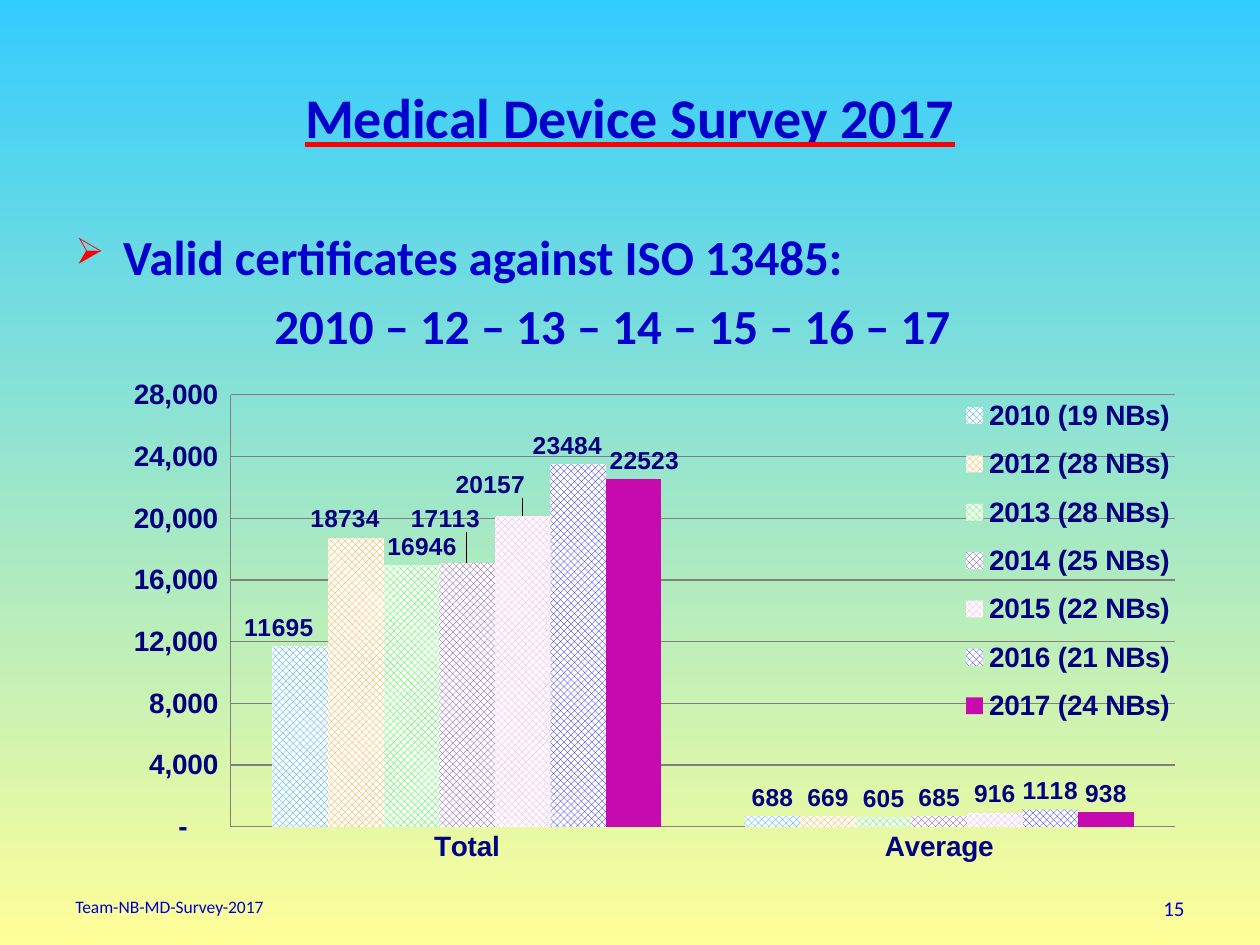
from dataclasses import dataclass

from lxml import etree
from pptx import Presentation
from pptx import util as u
from pptx.chart.data import CategoryChartData
from pptx.dml.color import RGBColor
from pptx.enum import chart as ch, dml, text
from pptx.oxml import parse_xml
from pptx.oxml.ns import nsdecls, qn


@dataclass(frozen=True)
class Theme:
    sky: str = "33CCFF"
    sand: str = "FFFF99"
    blue: str = "0000CC"
    navy: str = "000080"
    red: str = "FF0000"
    grey: str = "808080"
    white: str = "FFFFFF"
    font: str = "Calibri"
    plot: str = "Arial"
    title: int = 32
    body: int = 28
    axis: int = 16
    label: int = 14
    page: int = 12
    foot: int = 10


T = Theme()
CELL = 0.1  # grid of 100 columns by 75 rows, in inches

# name, total, average, colour, shift of the total's label (shares of the chart)
ROWS = [
    ("2010 (19 NBs)", 11695, 688, "0099FF", (-0.02, 0)),
    ("2012 (28 NBs)", 18734, 669, "FF9900", (-0.01, 0)),
    ("2013 (28 NBs)", 16946, 605, "00FF00", (0.01, 0)),
    ("2014 (25 NBs)", 17113, 685, "7030A0", (-0.02, -0.04)),
    ("2015 (22 NBs)", 20157, 916, "FD91E8", (-0.03, -0.02)),
    ("2016 (21 NBs)", 23484, 1118, "0101FF", (-0.01, 0)),
    ("2017 (24 NBs)", 22523, 938, "C709B0", (0.01, 0)),
]


def rgb(hue):
    return RGBColor.from_string(hue)


def grid(*cells):
    return [u.Inches(n * CELL) for n in cells]


def style(font, size, hue, name=T.font, bold=False):
    font.size, font.name, font.bold = u.Pt(size), name, bold
    font.color.rgb = rgb(hue)


def write(para, words, size=T.body, hue=T.blue, bold=False, align=None):
    run = para.add_run()
    run.text = words
    style(run.font, size, hue, bold=bold)
    para.alignment = align
    return run


def box(slide, *cells):
    frame = slide.shapes.add_textbox(*grid(*cells)).text_frame
    frame.word_wrap = True
    return frame


def bullet(para, mark, hue, share):
    props = para._p.get_or_add_pPr()
    props.set("marL", str(u.Inches(0.38)))
    props.set("indent", str(u.Inches(-0.38)))
    tone = etree.SubElement(props, qn("a:buClr"))
    etree.SubElement(tone, qn("a:srgbClr"), val=hue)
    etree.SubElement(props, qn("a:buSzPct"), val=str(share * 1000))
    etree.SubElement(props, qn("a:buChar"), char=mark)


def paint(slide):
    fill = slide.background.fill
    fill.gradient()
    fill.gradient_angle = 270
    for stop, hue, spot in zip(fill.gradient_stops, (T.sky, T.sand), (0, 1)):
        stop.color.rgb = rgb(hue)
        stop.position = spot


def head(slide, words):
    shape = slide.shapes.title
    shape.left, shape.top, shape.width, shape.height = grid(5, 3, 90, 12.5)
    frame = shape.text_frame
    frame.vertical_anchor = text.MSO_ANCHOR.MIDDLE
    run = write(frame.paragraphs[0], words, size=T.title, bold=True,
                align=text.PP_ALIGN.CENTER)
    run.font.underline = True
    line = parse_xml(f'<a:uFill {nsdecls("a")}><a:solidFill>'
                     f'<a:srgbClr val="{T.red}"/></a:solidFill></a:uFill>')
    run.font._element.find(qn("a:latin")).addprevious(line)


def body(slide):
    frame = box(slide, 5, 17.5, 90, 11.6)
    first = frame.paragraphs[0]
    bullet(first, "➢", T.red, 75)
    write(first, "Valid certificates against ISO 13485:", bold=True)
    years = frame.add_paragraph()
    years.space_before = u.Pt(T.body * 0.2)
    years._p.get_or_add_pPr().set("marL", str(u.Inches(1.58)))
    write(years, "2010 – 12 – 13 – 14 – 15 – 16 – 17", bold=True)


def layout(x, y, w=None, h=None, inner=False):
    """Manual chart layout: a shift, or a fixed frame when w and h are given."""
    parts = '<c:layoutTarget val="inner"/>' if inner else ""
    if w:
        parts += '<c:xMode val="edge"/><c:yMode val="edge"/>'
    for key, val in zip("xywh", (x, y, w, h)):
        if val is not None:
            parts += f'<c:{key} val="{val}"/>'
    return parse_xml(f'<c:layout {nsdecls("c")}><c:manualLayout>{parts}'
                     '</c:manualLayout></c:layout>')


def place(node, after, new):
    for old in node.findall(qn("c:layout")):
        node.remove(old)
    if after is None:
        node.insert(0, new)
    else:
        node.find(qn(after)).addnext(new)


def axes(chart):
    for axis in (chart.category_axis, chart.value_axis):
        axis.major_tick_mark = axis.minor_tick_mark = ch.XL_TICK_MARK.NONE
        axis.format.line.color.rgb = rgb(T.grey)
        style(axis.tick_labels.font, T.axis, T.navy, T.plot, True)
    axis.minimum_scale, axis.maximum_scale, axis.major_unit = 0, 28000, 4000
    axis.has_major_gridlines = True
    axis.major_gridlines.format.line.color.rgb = rgb(T.grey)
    ticks = axis.tick_labels
    ticks.number_format = r'_(* #,##0_);_(* \(#,##0\);_(* "-"??_);_(@_)'
    ticks.number_format_is_linked = False


def bars(plot):
    last = ROWS[-1]
    for ser, row in zip(plot.series, ROWS):
        hue, shift = row[3:]
        fill = ser.format.fill
        if row is last:
            fill.solid()
        else:
            fill.patterned()
            fill.pattern = dml.MSO_PATTERN.LARGE_CHECKER_BOARD
            fill.back_color.rgb = rgb(T.white)
        fill.fore_color.rgb = rgb(hue)
        tags = ser.data_labels
        tags.show_value = True
        tags.number_format, tags.number_format_is_linked = "0", False
        total = ser.points[0].data_label
        for tag in (tags, total):
            tag.position = ch.XL_LABEL_POSITION.OUTSIDE_END
            style(tag.font, T.label, T.navy, T.plot, True)
        place(ser._element.find(".//" + qn("c:dLbl")), "c:idx", layout(*shift))


def graph(slide):
    data = CategoryChartData(number_format="0")
    data.categories = ["Total", "Average"]
    for name, total, mean, *_ in ROWS:
        data.add_series(name, (total, mean))
    chart = slide.shapes.add_chart(ch.XL_CHART_TYPE.COLUMN_CLUSTERED,
                                   *grid(9.8, 20.9, 85.2, 49.7), data).chart
    chart.has_title = False
    chart.font.name, chart.font.size = T.plot, u.Pt(10)
    plot = chart.plots[0]
    plot.gap_width, plot.overlap, plot.vary_by_categories = 150, 0, False
    axes(chart)
    bars(plot)
    chart.has_legend = True
    key = chart.legend
    key.position = ch.XL_LEGEND_POSITION.RIGHT
    key.include_in_layout = False
    style(key.font, T.axis, T.navy, T.plot, True)
    place(key._element, "c:legendPos", layout(0.78, 0.19, 0.2, 0.57))
    area = chart._chartSpace.find(".//" + qn("c:plotArea"))
    place(area, None, layout(0.1, 0.21, 0.88, 0.69, inner=True))


def main():
    deck = Presentation()
    deck.slide_width, deck.slide_height = grid(100, 75)
    slide = deck.slides.add_slide(deck.slide_layouts[5])
    paint(slide)
    head(slide, "Medical Device Survey 2017")
    body(slide)
    graph(slide)
    write(box(slide, 5, 70.6, 31.7, 2.9).paragraphs[0],
          "Team-NB-MD-Survey-2017", size=T.foot)
    write(box(slide, 71.7, 70.6, 23.3, 2.9).paragraphs[0], "15",
          size=T.page, align=text.PP_ALIGN.RIGHT)
    deck.save("out.pptx")


if __name__ == "__main__":
    main()
